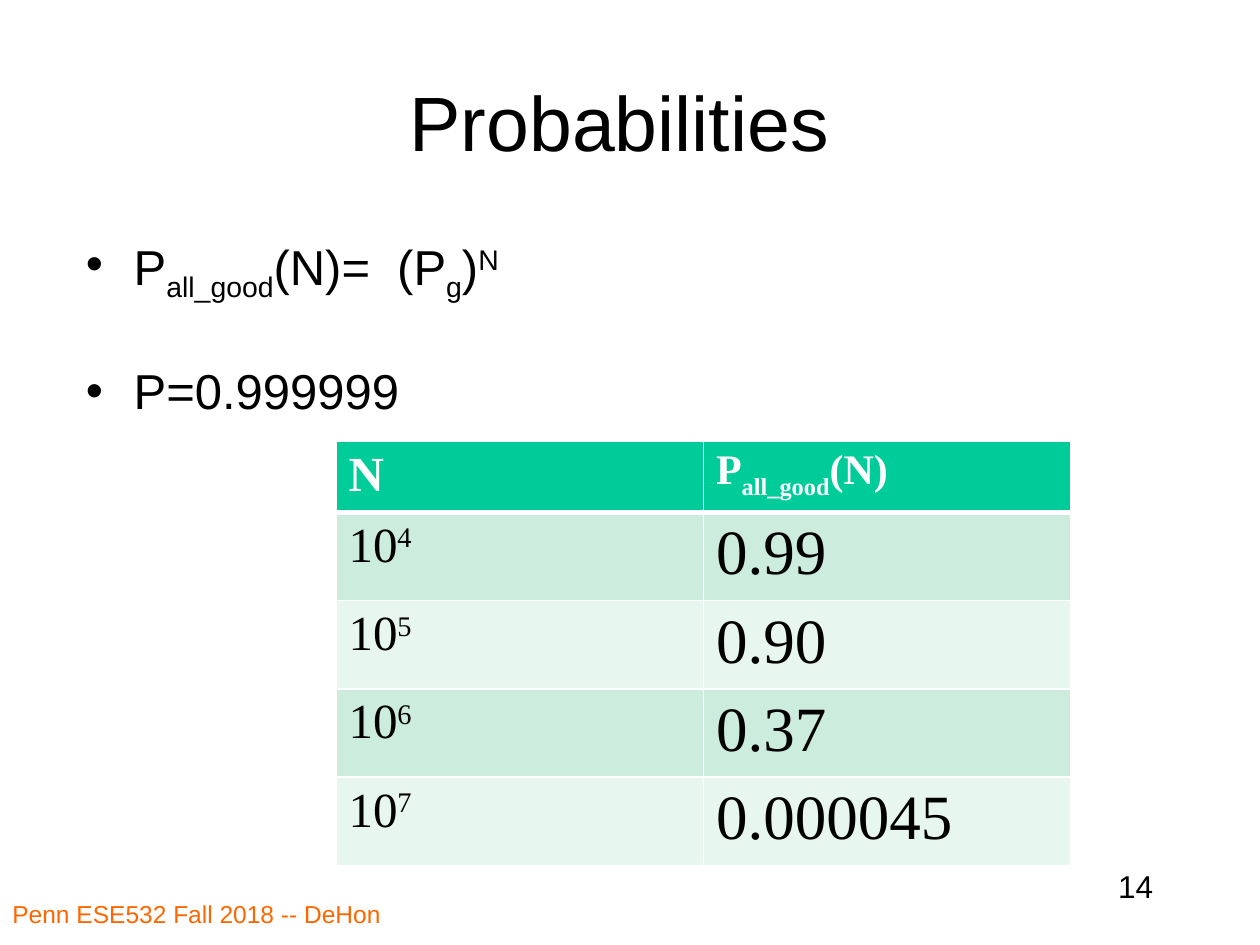
import pptx
import pptx.dml.color
import pptx.enum.text
import pptx.oxml
import pptx.oxml.ns
import pptx.util

Pt = pptx.util.Pt
Align = pptx.enum.text.PP_ALIGN
Anchor = pptx.enum.text.MSO_ANCHOR
SUB, SUP = -25000, 30000


def paint(code):
    return pptx.dml.color.RGBColor.from_string(code)


def node(xml):
    """Parse one drawing element, given without its namespace declaration."""
    head, tail = xml.split(" ", 1)
    return pptx.oxml.parse_xml(f"{head} {pptx.oxml.ns.nsdecls('a')} {tail}")


def write(para, parts, size=28, font="Arial", color="000000", bold=False,
          align=Align.LEFT):
    """Fill a paragraph; a part is plain text or a (text, baseline) pair."""
    para.alignment = align
    for part in [parts] if isinstance(parts, str) else parts:
        text, base = (part, 0) if isinstance(part, str) else part
        run = para.add_run()
        run.text = text
        run.font.size, run.font.name, run.font.bold = Pt(size), font, bold
        run.font.color.rgb = paint(color)
        if base:
            run.font._element.set("baseline", str(base))


class Deck:
    """Style and current slide; lengths are cells of a 120 by 90 grid."""
    serif = "Times New Roman"
    accent, head, bands = "FF6600", "00CC99", ("CCECDE", "E7F6EF")

    def __init__(self):
        self.file = pptx.Presentation()
        self.file.slide_width = pptx.util.Inches(10)
        self.file.slide_height = pptx.util.Inches(7.5)
        self.unit = self.file.slide_width / 120
        self.slide = self.file.slides.add_slide(self.file.slide_layouts[5])

    def span(self, *cells):
        return [round(cell * self.unit) for cell in cells]

    def title(self, text, *box):
        shape = self.slide.shapes.title
        shape.left, shape.top, shape.width, shape.height = self.span(*box)
        shape.text_frame.vertical_anchor = Anchor.MIDDLE
        write(shape.text_frame.paragraphs[0], text, size=44,
              align=Align.CENTER)

    def text(self, parts, *box, **style):
        frame = self.slide.shapes.add_textbox(*self.span(*box)).text_frame
        frame.word_wrap = True
        write(frame.paragraphs[0], parts, **style)
        return frame

    def bullets(self, items, *box, gap):
        """Stack bulleted lines, with gap points above all but the first."""
        frame = self.text(items[0], *box)
        for item in items[1:]:
            write(frame.add_paragraph(), item)
        for row, para in enumerate(frame.paragraphs):
            para.line_spacing = 0.9
            para.space_before = Pt(gap if row else 5.6)
            props = para._p.get_or_add_pPr()
            hang = pptx.util.Inches(0.38)
            props.set("marL", str(hang))
            props.set("indent", str(-hang))
            props.append(node('<a:buFont typeface="Arial"/>'))
            props.append(node('<a:buChar char="•"/>'))

    def cell(self, cell, parts, row, size):
        top = row == 0
        props = cell._tc.get_or_add_tcPr()
        wide = {"T": 3 if row == 1 else 1, "B": 3 if top else 1}
        for side in "LRTB":
            props.append(node(
                f'<a:ln{side} w="{Pt(wide.get(side, 1))}"><a:solidFill>'
                f'<a:srgbClr val="FFFFFF"/></a:solidFill></a:ln{side}>'))
        cell.fill.solid()
        cell.fill.fore_color.rgb = paint(
            self.head if top else self.bands[(row - 1) % 2])
        write(cell.text_frame.paragraphs[0], parts, size=size, bold=top,
              font=self.serif, color="FFFFFF" if top else "000000")

    def table(self, rows, left, top, width, highs):
        box = self.span(left, top, width, sum(highs))
        grid = self.slide.shapes.add_table(len(rows), len(rows[0]), *box).table
        for row, (parts, high) in enumerate(zip(rows, highs)):
            grid.rows[row].height = self.span(high)[0]
            sizes = (28, 36) if row else (28, 24)
            for col, (part, size) in enumerate(zip(parts, sizes)):
                self.cell(grid.cell(row, col), part, row, size)


def main():
    deck = Deck()
    deck.text("Penn ESE532 Fall 2018 -- DeHon", 0, 85, 49, 5,
              size=14, color=deck.accent)
    deck.text("14", 86, 82, 25, 6, size=18, align=Align.RIGHT)
    deck.title("Probabilities", 8, 4, 102, 15)

    good = ["P", ("all_good", SUB)]
    deck.bullets([good + ["(N)=  (P", ("g", SUB), ")", ("N", SUP)],
                  "P=0.999999"], 7, 22, 102, 60, gap=40)

    odds = {"4": "0.99", "5": "0.90", "6": "0.37", "7": "0.000045"}
    rows = [["N", good + ["(N)"]]]
    rows += [[["10", (power, SUP)], odd] for power, odd in odds.items()]
    deck.table(rows, 32, 42, 70, [6.2] + [7.8] * len(odds))
    deck.file.save("out.pptx")


if __name__ == "__main__":
    main()
